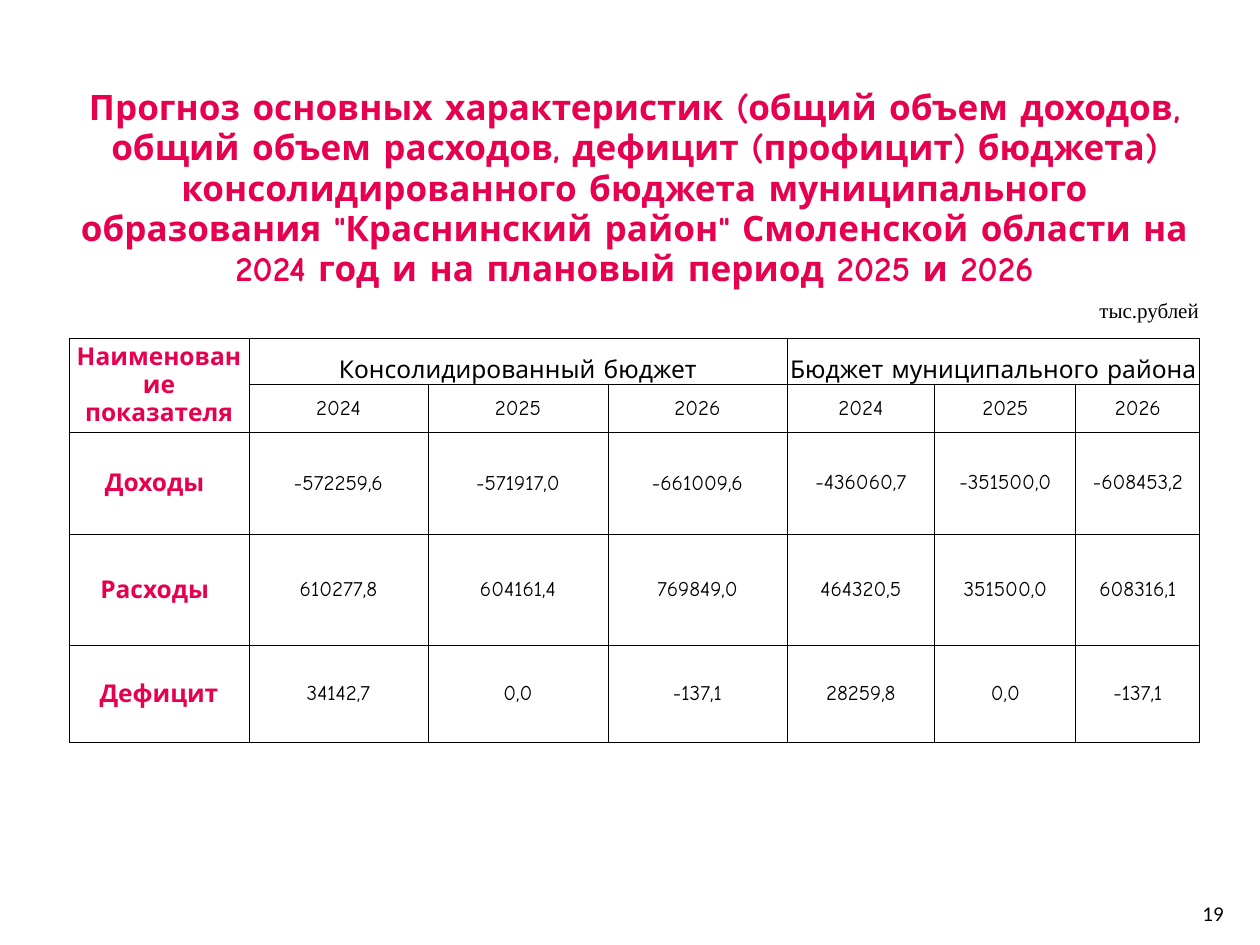
from dataclasses import dataclass
from typing import Optional

from lxml.etree import SubElement
from pptx import Presentation
from pptx.dml.color import RGBColor
from pptx.enum.text import MSO_ANCHOR as Anchor, PP_ALIGN as Align
from pptx.oxml.ns import qn
from pptx.util import Emu, Pt

PX_PER_INCH = 126


def px(length: int) -> Emu:
    return Emu(round(length * 914400 / PX_PER_INCH))


# Colours and type sizes
@dataclass(frozen=True)
class Theme:
    accent: str = "E6004D"
    ink: str = "000000"
    body_font: str = "Comic Neue"
    unit_font: str = "Times New Roman"
    number_font: str = "Calibri"
    title_size: int = 20
    heading_size: int = 14
    value_size: int = 12
    rule_width: float = 0.5


THEME = Theme()


@dataclass(frozen=True)
class TextStyle:
    size: int
    color: str = THEME.ink
    bold: bool = False
    font: str = THEME.body_font
    align: Align = Align.CENTER
    anchor: Anchor = Anchor.MIDDLE


@dataclass(frozen=True)
class Entry:
    row: int
    column: int
    text: str
    style: TextStyle
    row_span: int = 1
    column_span: int = 1
    side_inset: int = 1


TITLE = TextStyle(THEME.title_size, THEME.accent, True, anchor=Anchor.TOP)
UNIT = TextStyle(THEME.value_size, font=THEME.unit_font, align=Align.RIGHT, anchor=Anchor.TOP)
LABEL = TextStyle(THEME.heading_size, THEME.accent, True)
GROUP = TextStyle(THEME.heading_size, anchor=Anchor.BOTTOM)
VALUE = TextStyle(THEME.value_size)
PAGE_NUMBER = TextStyle(THEME.value_size, font=THEME.number_font, align=Align.RIGHT)

# Table content
COLUMN_WIDTHS = (180, 179, 180, 179, 148, 141, 124)
ROW_HEIGHTS = (192, 39, 46, 48, 102, 111, 97)
FIRST_RULED_ROW = 2
YEARS = ("2024", "2025", "2026")
HEADINGS = (
    Entry(0, 0, "Прогноз основных характеристик (общий объем доходов, общий объем расходов, "
          "дефицит (профицит) бюджета) консолидированного бюджета муниципального образования "
          "\"Краснинский район\" Смоленской области на 2024 год и на плановый период 2025 и 2026",
          TITLE, column_span=7),
    Entry(1, 6, "тыс.рублей", UNIT),
    Entry(2, 0, "Наименование показателя", LABEL, row_span=2),
    Entry(2, 1, "Консолидированный бюджет", GROUP, column_span=3),
    Entry(2, 4, "Бюджет муниципального района", GROUP, column_span=3),
)
INDICATORS = (
    ("Доходы ", "-572259,6", "-571917,0", "-661009,6", "-436060,7", "-351500,0", "-608453,2"),
    ("Расходы ", "610277,8", "604161,4", "769849,0", "464320,5", "351500,0", "608316,1"),
    ("Дефицит", "34142,7", "0,0", "-137,1", "28259,8", "0,0", "-137,1"),
)


def table_entries() -> list[Entry]:
    entries = list(HEADINGS)
    entries += [Entry(3, column, year, VALUE) for column, year in enumerate(YEARS * 2, 1)]
    for row, indicator in enumerate(INDICATORS, 4):
        for column, text in enumerate(indicator):
            side_inset = 9 if column > 3 and row < 6 else 1
            entries.append(Entry(row, column, text, VALUE if column else LABEL,
                                 side_inset=side_inset))
    return entries


def write_text(frame, text: str, style: TextStyle) -> None:
    para = frame.paragraphs[0]
    para.alignment = style.align
    span = para.add_run()
    span.text = text
    font_values = {"size": Pt(style.size), "bold": style.bold, "name": style.font}
    for name, value in font_values.items():
        setattr(span.font, name, value)
    span.font.color.rgb = RGBColor.from_string(style.color)


def set_margins(target, side: int, top: int = 1) -> None:
    margins = {"left": side, "right": side, "top": top, "bottom": 0}
    for edge, length in margins.items():
        setattr(target, f"margin_{edge}", px(length))


def draw_border(cell, edge: str, color: Optional[str]) -> None:
    properties = cell._tc.get_or_add_tcPr()
    line = SubElement(properties, qn(f"a:ln{edge}"), w=str(Pt(THEME.rule_width)))
    if color is None:
        SubElement(line, qn("a:noFill"))
    else:
        fill = SubElement(line, qn("a:solidFill"))
        SubElement(fill, qn("a:srgbClr"), val=color)


def format_grid(table) -> None:
    for row in range(len(ROW_HEIGHTS)):
        for column in range(len(COLUMN_WIDTHS)):
            cell = table.cell(row, column)
            set_margins(cell, 1)
            for edge in "LRTB":
                ruled = row >= FIRST_RULED_ROW or (row == FIRST_RULED_ROW - 1 and edge == "B")
                draw_border(cell, edge, THEME.ink if ruled else None)
            cell.fill.background()


def fill_cell(table, entry: Entry) -> None:
    cell = table.cell(entry.row, entry.column)
    if entry.row_span > 1 or entry.column_span > 1:
        cell.merge(table.cell(entry.row + entry.row_span - 1,
                              entry.column + entry.column_span - 1))
    set_margins(cell, entry.side_inset, 1 if entry.side_inset == 1 else 0)
    cell.vertical_anchor = entry.style.anchor
    write_text(cell.text_frame, entry.text, entry.style)


def draw_table(page) -> None:
    table = page.shapes.add_table(
        len(ROW_HEIGHTS), len(COLUMN_WIDTHS), px(69), px(88),
        px(sum(COLUMN_WIDTHS)), px(sum(ROW_HEIGHTS))).table
    table.first_row = table.horz_banding = False
    for column, width in zip(table.columns, COLUMN_WIDTHS):
        column.width = px(width)
    for row, height in zip(table.rows, ROW_HEIGHTS):
        row.height = px(height)
    format_grid(table)
    for entry in table_entries():
        fill_cell(table, entry)


def draw_page_number(page) -> None:
    box = page.shapes.add_textbox(px(1131), px(896), px(105), px(34))
    frame = box.text_frame
    frame.word_wrap = True
    frame.vertical_anchor = PAGE_NUMBER.anchor
    write_text(frame, "19", PAGE_NUMBER)


def main() -> None:
    deck = Presentation()
    deck.slide_width, deck.slide_height = px(1260), px(945)
    page = deck.slides.add_slide(deck.slide_layouts[6])
    draw_page_number(page)
    draw_table(page)
    deck.save("out.pptx")


if __name__ == "__main__":
    main()
